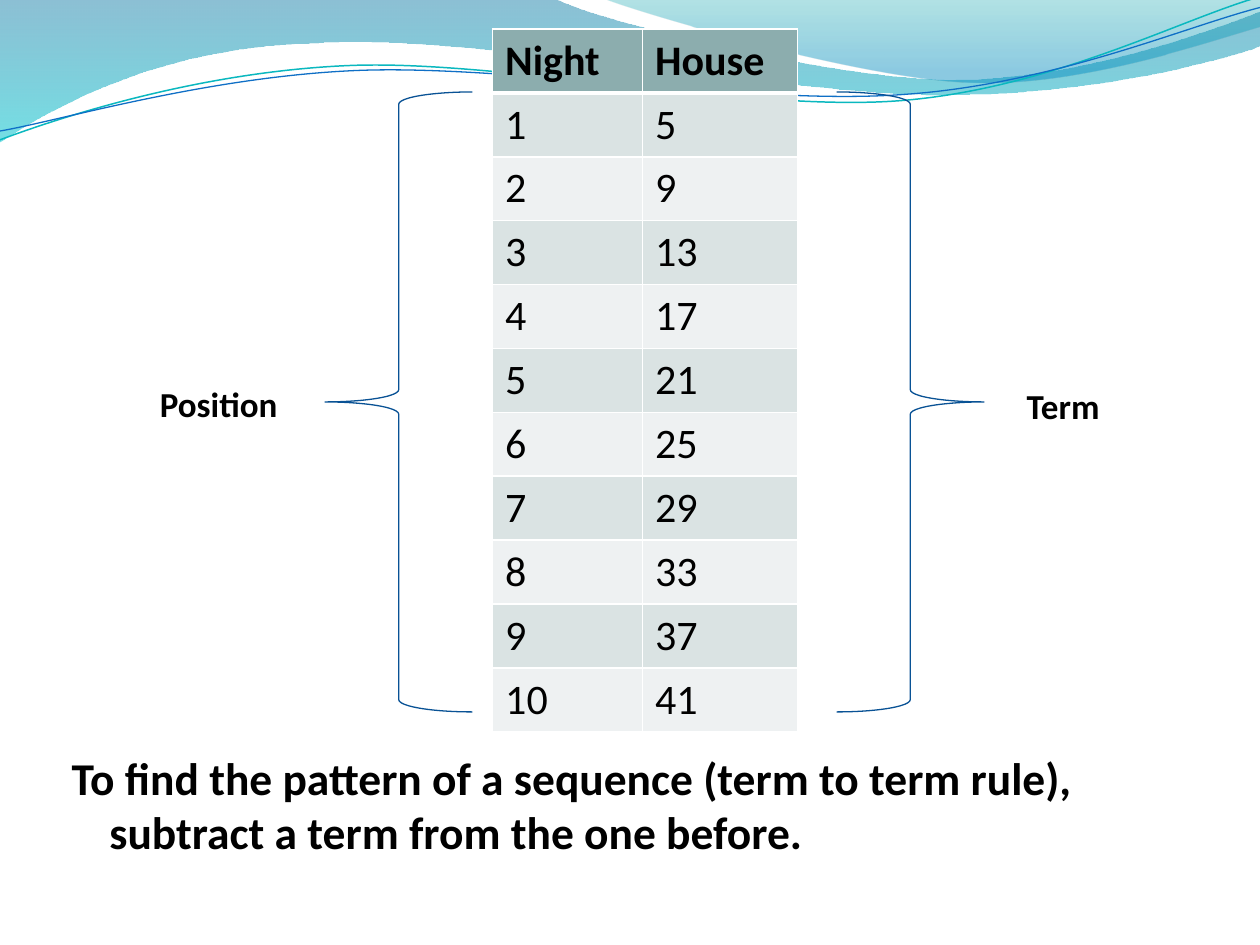
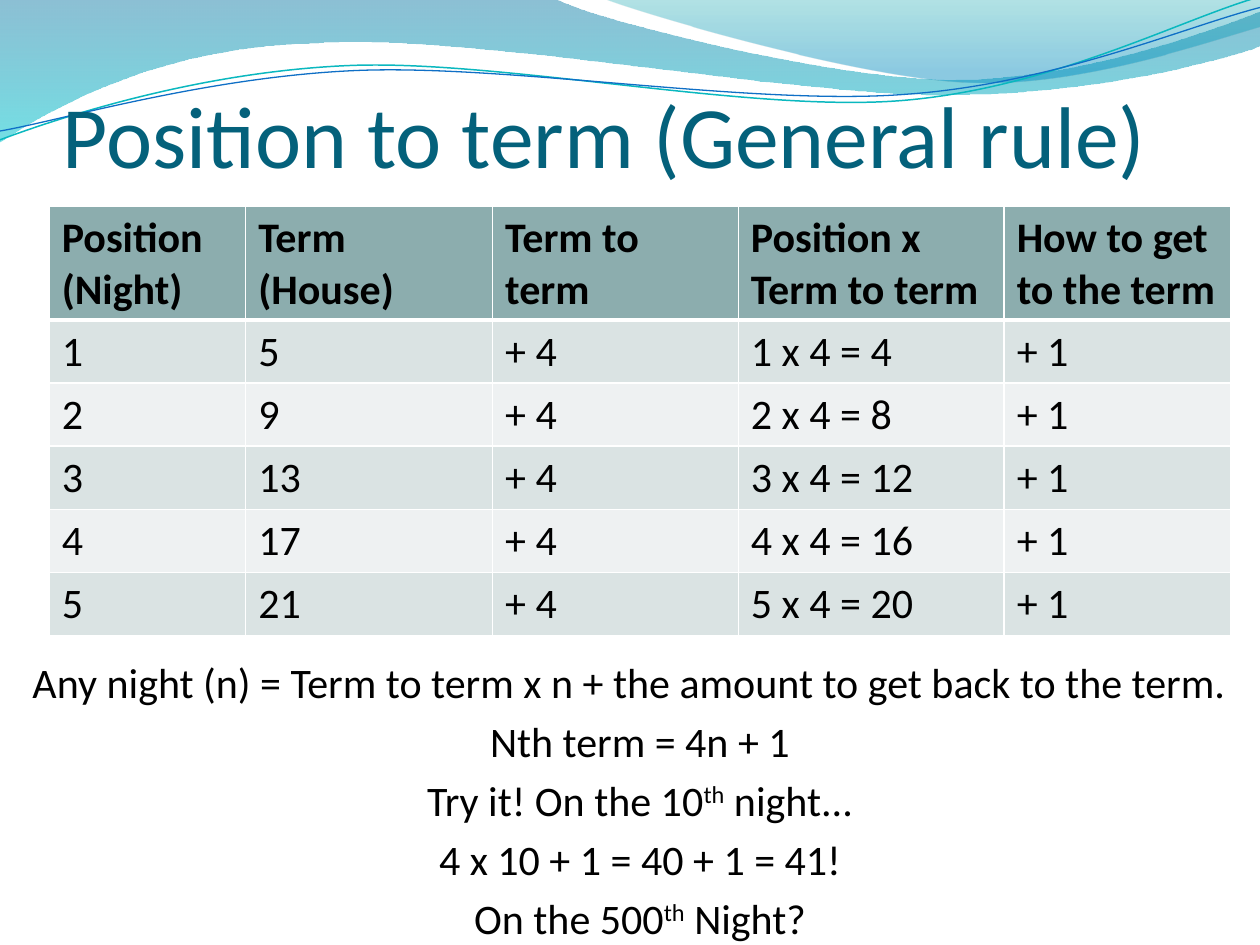
import math
import pptx
import pptx.dml.color
import pptx.enum.shapes
import pptx.enum.text
import pptx.oxml
import pptx.oxml.ns
import pptx.util
from dataclasses import dataclass
from lxml import etree

Inches, Pt = pptx.util.Inches, pptx.util.Pt
qn = pptx.oxml.ns.qn
ALIGN = pptx.enum.text.PP_ALIGN
ANCHOR = pptx.enum.text.MSO_ANCHOR
BRACE = pptx.enum.shapes.MSO_SHAPE.LEFT_BRACE


@dataclass(frozen=True)
class Theme:
    font: str = "Calibri"
    ink: str = "000000"
    title: str = "04617B"
    brace: str = "095295"
    rule: str = "FFFFFF"
    head: str = "8CADAE"
    bands: tuple = ("DAE3E3", "EEF1F2")
    title_size: float = 50
    note_size: float = 26
    body_size: float = 24
    cell_size: float = 24
    label_size: float = 20


T = Theme()

# Waves: a start point, then curves of three points or lines of one.
BANDS = [
    ([(0, 0), [(4.4, -0.01)],
      [(4.76, 0.17), (6.64, 0.63), (7.58, 0.63)],
      [(8.53, 0.63), (9.58, 0.26), (10, 0.09)], [(10.01, 0.36)],
      [(9.83, 0.44), (8.7, 0.76), (7.46, 0.75)],
      [(6.22, 0.75), (3.82, 0.28), (2.57, 0.34)],
      [(1.29, 0.36), (0.46, 0.83), (-0.01, 1.13)]],
     [(0, "0074A1", 45), (1, "00C6CF", 55)]),
    ([(4.79, -0.01),
      [(5.09, 0.11), (6.82, 0.62), (7.69, 0.65)],
      [(8.56, 0.69), (9.61, 0.32), (10, 0.21)], [(10, 0)]],
     [(0, "00A1A9", 30), (0.8, "008BBF", 45)]),
]
TILT = -2.7
# Strands: route as seen after the tilt, its centre, colour, width.
STRANDS = [
    ([(0, 1.11),
      [(0.48, 0.93), (1.58, 0.57), (2.77, 0.52)],
      [(3.95, 0.47), (5.93, 0.89), (7.13, 0.8)],
      [(8.33, 0.71), (9.38, 0.15), (9.98, -0.02)]],
     (4.99, 0.57), "0AB8BF", 0.85),
    ([(0, 1.04),
      [(0.47, 0.96), (1.64, 0.61), (2.83, 0.56)],
      [(4.03, 0.51), (5.97, 0.84), (7.17, 0.75)],
      [(8.36, 0.67), (9.41, 0.21), (10, 0.06)]],
     (5, 0.59), "0F6FC6", 0.75),
]

STEP, EXTRA = 4, 1
HOUSES = [("Night", "House")] + [
    (n, STEP * n + EXTRA) for n in range(1, 11)]
RULES = [("Position (Night)", "Term (House)", "Term to term",
          "Position x Term to term", "How to get to the term")] + [
    (n, STEP * n + EXTRA, f"+ {STEP}", f"{n} x {STEP} = {STEP * n}",
     f"+ {EXTRA}") for n in range(1, 6)]

LABELS = [("Position", 1.17, 2.99), ("Term", 8.05, 3)]
BRACES = [(2.58, False), (6.64, True)]
NOTE = ("To find the pattern of a sequence (term to term rule), "
        "subtract a term from the one before.")
TITLE = "Position to term (General rule)"
# A ^ opens and closes raised text.
BODY = [
    ("Any night (n) = Term to term x n + the amount to get back to the term.",
     ALIGN.LEFT),
    ("Nth term = 4n + 1", ALIGN.CENTER),
    ("Try it! On the 10^th^ night...", ALIGN.CENTER),
    ("4 x 10 + 1 = 40 + 1 = 41!", ALIGN.CENTER),
    ("On the 500^th^ Night?", ALIGN.CENTER),
]


def rgb(code):
    return pptx.dml.color.RGBColor.from_string(code)


def style(para, size, color=T.ink, bold=False):
    font = para.font
    font.name, font.size, font.bold = T.font, Pt(size), bold
    font.color.rgb = rgb(color)


def trace(slide, route, close):
    """Draw a route as a freeform, joining each three points into a curve."""
    start, *legs = route
    form = slide.shapes.build_freeform(Inches(start[0]), Inches(start[1]))
    form.add_line_segments(
        [(Inches(x), Inches(y)) for leg in legs for x, y in leg], close)
    shape = form.convert_to_shape()
    shape.shadow.inherit = False
    lines = iter(list(shape._element.spPr.iter(qn("a:lnTo"))))
    for leg in legs:
        parts = [next(lines) for _ in leg]
        if len(leg) == 3:
            curve = etree.Element(qn("a:cubicBezTo"))
            parts[0].addprevious(curve)
            for part in parts:
                curve.append(part[0])
                part.getparent().remove(part)
    return shape


def turn(point, mid, angle):
    """Turn a point clockwise about mid."""
    a = math.radians(angle)
    x, y = point[0] - mid[0], point[1] - mid[1]
    return (mid[0] + x * math.cos(a) - y * math.sin(a),
            mid[1] + x * math.sin(a) + y * math.cos(a))


def waves(slide):
    for route, stops in BANDS:
        band = trace(slide, route, True)
        band.line.fill.background()
        band.fill.gradient()
        band.fill.gradient_angle = 270
        for stop, (place, color, _) in zip(band.fill.gradient_stops, stops):
            stop.position = place
            stop.color.rgb = rgb(color)
        marks = band._element.spPr.iter(qn("a:srgbClr"))
        for mark, (_, _, alpha) in zip(marks, stops):
            etree.SubElement(mark, qn("a:alpha")).set("val", str(alpha * 1000))
    for (start, *legs), mid, color, width in STRANDS:
        flat = [turn(start, mid, -TILT)]
        flat += [[turn(p, mid, -TILT) for p in leg] for leg in legs]
        strand = trace(slide, flat, False)
        strand.rotation = TILT
        strand.fill.background()
        strand.line.color.rgb = rgb(color)
        strand.line.width = Pt(width)


def box(slide, x, y, w, h):
    frame = slide.shapes.add_textbox(
        Inches(x), Inches(y), Inches(w), Inches(h)).text_frame
    frame.word_wrap = True
    return frame


def hang(para, gap):
    """Give a paragraph a hanging indent and space above."""
    props = para._p.get_or_add_pPr()
    props.set("marL", str(Inches(0.3)))
    props.set("indent", str(-Inches(0.3)))
    para.space_before = Pt(gap)


def edge(cell, row):
    """Draw the four borders, with a thick one below the header."""
    props = cell._tc.get_or_add_tcPr()
    for side in "LRTB":
        thick = (row, side) in ((0, "B"), (1, "T"))
        line = etree.SubElement(props, qn(f"a:ln{side}"))
        line.set("w", str(Pt(3 if thick else 1)))
        fill = etree.SubElement(line, qn("a:solidFill"))
        etree.SubElement(fill, qn("a:srgbClr")).set("val", T.rule)


def grid(slide, rows, x, y, widths, height):
    """Add a table whose rows grow from a low minimum to fit their text."""
    holder = slide.shapes.add_table(
        len(rows), len(widths), Inches(x), Inches(y),
        Inches(sum(widths)), Inches(height))
    table = holder.table
    table.horz_banding = False
    for col, width in zip(table.columns, widths):
        col.width = Inches(width)
    for r, row in enumerate(rows):
        table.rows[r].height = Inches(0.41)
        for c, value in enumerate(row):
            cell = table.cell(r, c)
            edge(cell, r)
            cell.fill.solid()
            cell.fill.fore_color.rgb = rgb(T.bands[(r - 1) % 2] if r else T.head)
            cell.text = str(value)
            style(cell.text_frame.paragraphs[0], T.cell_size, bold=r == 0)
    holder.height = Inches(height)


def houses(slide):
    grid(slide, HOUSES, 3.91, 0.23, (1.19, 1.23), 5.5)
    for x, flip in BRACES:
        brace = slide.shapes.add_shape(
            BRACE, Inches(x), Inches(0.73), Inches(1.17), Inches(4.92))
        brace.shadow.inherit = False
        brace.fill.background()
        brace.line.color.rgb = rgb(T.brace)
        brace.line.width = Pt(0.75)
        if flip:
            brace._element.spPr.find(qn("a:xfrm")).set("flipH", "1")
    for text, x, y in LABELS:
        para = box(slide, x, y, 2.27, 0.44).paragraphs[0]
        para.text = text
        style(para, T.label_size, bold=True)
    para = box(slide, 0.47, 5.9, 8.59, 0.98).paragraphs[0]
    para.text = NOTE
    hang(para, 5)
    style(para, T.note_size, bold=True)


def rules(slide):
    frame = box(slide, 0.5, 0.23, 9, 1.25)
    frame.vertical_anchor = ANCHOR.BOTTOM
    frame.margin_left = frame.margin_right = frame.margin_bottom = 0
    para = frame.paragraphs[0]
    para.text = TITLE
    style(para, T.title_size, T.title)

    frame = box(slide, 0.16, 5.16, 9.84, 2.11)
    for i, (text, align) in enumerate(BODY):
        para = frame.add_paragraph() if i else frame.paragraphs[0]
        para.alignment = align
        hang(para, 4.9)
        style(para, T.body_size)
        for k, part in enumerate(text.split("^")):
            run = para.add_run()
            run.text = part
            if k % 2:
                run._r.get_or_add_rPr().set("baseline", "30000")
    grid(slide, RULES, 0.39, 1.64, (1.56, 1.96, 1.95, 2.11, 1.8), 3.4)


def main():
    deck = pptx.Presentation()
    deck.slide_width, deck.slide_height = Inches(10), Inches(7.5)
    for build in (houses, rules):
        slide = deck.slides.add_slide(deck.slide_layouts[6])
        waves(slide)
        build(slide)
    deck.save("out.pptx")


if __name__ == "__main__":
    main()
